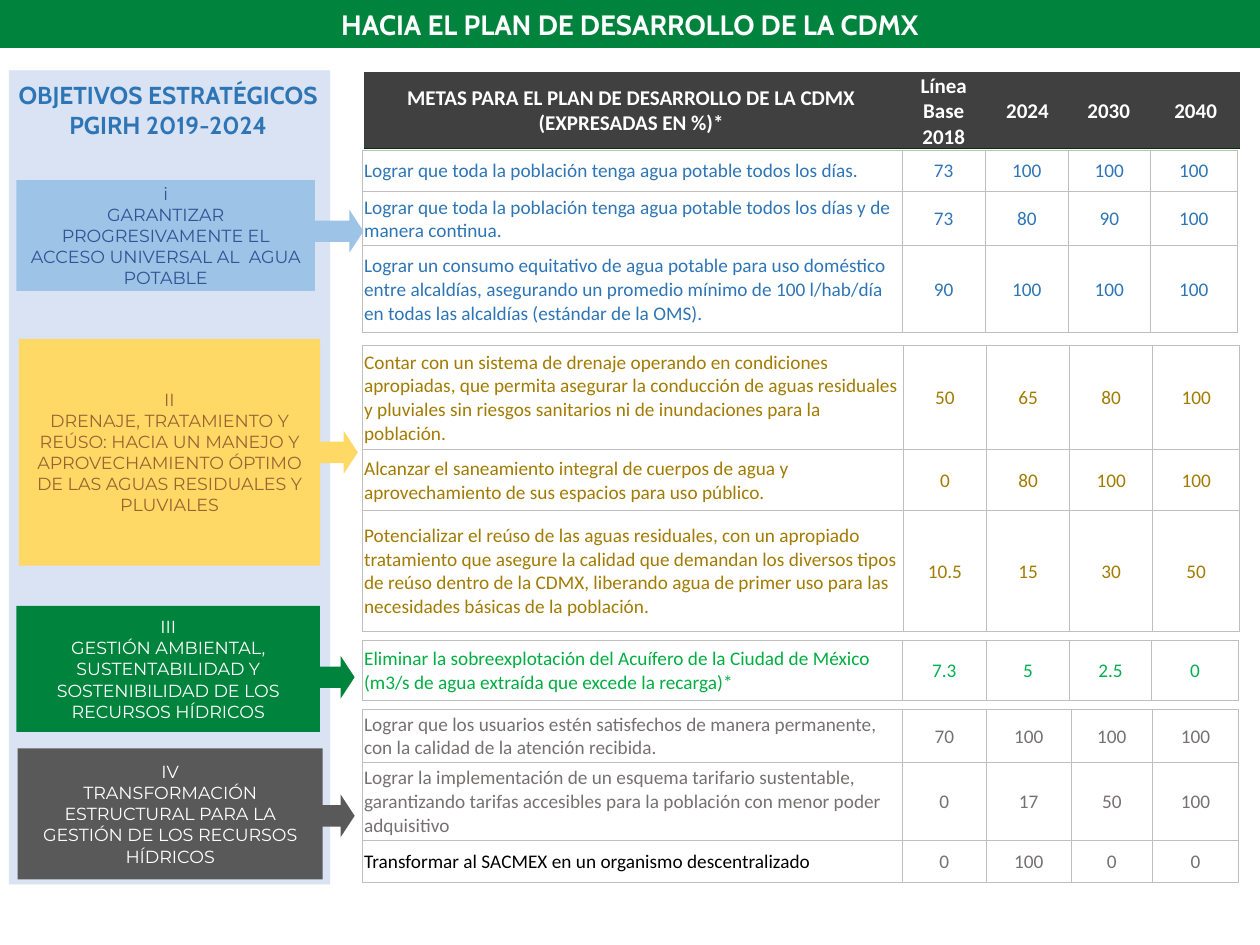
from lxml.etree import SubElement
from pptx import Presentation
from pptx.dml.color import RGBColor
from pptx.enum.shapes import MSO_SHAPE
from pptx.enum.text import MSO_ANCHOR, PP_ALIGN
from pptx.oxml.ns import qn
from pptx.util import Inches, Pt

COLORS = {
    "white": "FFFFFF", "black": "000000", "panel": "DAE3F3",
    "green": "00843D", "blue": "2E75B6", "header": "404040",
    "header_line": "003300", "grid": "BFBFBF", "sky": "9DC3E6",
    "navy": "2F5597", "yellow": "FFD966", "brown": "996633",
    "dark": "595959", "ochre": "A27B00", "goal_green": "00AE42",
    "value_green": "00B050", "gray": "767171",
}
TITLE = {"name": "Cabin", "size": Pt(16), "bold": True}
SUBTITLE = {"name": "Cabin", "size": Pt(14), "bold": True}
OBJECTIVE = {"name": "Montserrat", "size": Pt(10), "bold": False}
HEADER = {"name": "Calibri", "size": Pt(12), "bold": True}
BODY = {"name": "Calibri", "size": Pt(11), "bold": False}
MARGINS = ("margin_left", "margin_right", "margin_top", "margin_bottom")

ARROWS = [
    ((2.26, 6.09, 0.34, 0.77), "dark"),
    ((2.31, 5.04, 0.34, 0.67), "green"),
    ((2.3, 3.22, 0.34, 0.74), "yellow"),
    ((2.38, 1.5, 0.34, 0.67), "sky"),
]
OBJECTIVES = [
    ((0.13, 1.43, 2.37, 0.88), "sky", "navy",
     ["i", "GARANTIZAR PROGRESIVAMENTE EL ACCESO UNIVERSAL AL  AGUA POTABLE"]),
    ((0.15, 2.69, 2.39, 1.8), "yellow", "brown",
     ["II", "DRENAJE, TRATAMIENTO Y REÚSO: HACIA UN MANEJO Y APROVECHAMIENTO "
      "ÓPTIMO DE LAS AGUAS RESIDUALES Y PLUVIALES"]),
    ((0.13, 4.81, 2.41, 1), "green", "white",
     ["III", "GESTIÓN AMBIENTAL, SUSTENTABILIDAD Y SOSTENIBILIDAD DE LOS "
      "RECURSOS HÍDRICOS"]),
    ((0.14, 5.94, 2.42, 1.04), "dark", "white",
     ["IV", "TRANSFORMACIÓN ESTRUCTURAL PARA LA GESTIÓN DE LOS RECURSOS "
      "HÍDRICOS"]),
]
HEADER_ROW = ["METAS PARA EL PLAN DE DESARROLLO DE LA CDMX (EXPRESADAS EN %)*",
              "Línea Base 2018", "2024", "2030", "2040"]
GOAL_TABLES = [
    (1.19, [4.28, 0.66, 0.66, 0.65, 0.69], "blue", [
        (0.33, "blue", ["Lograr que toda la población tenga agua potable todos "
                        "los días.", "73", "100", "100", "100"]),
        (0.43, "blue", ["Lograr que toda la población tenga agua potable todos "
                        "los días y de manera continua.",
                        "73", "80", "90", "100"]),
        (0.69, "blue", ["Lograr un consumo equitativo de agua potable para uso "
                        "doméstico entre alcaldías, asegurando un promedio "
                        "mínimo de 100 l/hab/día en todas las alcaldías "
                        "(estándar de la OMS).", "90", "100", "100", "100"]),
    ]),
    (2.74, [4.29, 0.66, 0.66, 0.66, 0.69], "ochre", [
        (0.83, "ochre", ["Contar con un sistema de drenaje operando en "
                         "condiciones apropiadas, que permita asegurar la "
                         "conducción de aguas residuales y pluviales sin "
                         "riesgos sanitarios ni de inundaciones para la "
                         "población.", "50", "65", "80", "100"]),
        (0.48, "ochre", ["Alcanzar el saneamiento integral de cuerpos de agua "
                         "y aprovechamiento de sus espacios para uso público.",
                         "0", "80", "100", "100"]),
        (0.96, "ochre", ["Potencializar el reúso de las aguas residuales, con "
                         "un apropiado tratamiento que asegure la calidad que "
                         "demandan los diversos tipos de reúso dentro de la "
                         "CDMX, liberando agua de primer uso para las "
                         "necesidades básicas de la población.",
                         "10.5", "15", "30", "50"]),
    ]),
    (5.08, [4.28, 0.67, 0.66, 0.65, 0.69], "value_green", [
        (0.48, "goal_green", ["Eliminar la sobreexplotación del Acuífero de la "
                              "Ciudad de México (m3/s de agua extraída que "
                              "excede la recarga)*", "7.3", "5", "2.5", "0"]),
    ]),
    (5.63, [4.28, 0.67, 0.67, 0.65, 0.68], "gray", [
        (0.42, "gray", ["Lograr que los usuarios estén satisfechos de manera "
                        "permanente, con la calidad de la atención recibida.",
                        "70", "100", "100", "100"]),
        (0.62, "gray", ["Lograr la implementación de un esquema tarifario "
                        "sustentable, garantizando tarifas accesibles para la "
                        "población con menor poder adquisitivo",
                        "0", "17", "50", "100"]),
        (0.33, "black", ["Transformar al SACMEX en un organismo "
                         "descentralizado", "0", "100", "0", "0"]),
    ]),
]


def rgb(color):
    """Return the named color."""
    return RGBColor.from_string(COLORS[color])


def write_text(text_frame, lines, style, color, align=PP_ALIGN.CENTER):
    """Write one formatted paragraph per line."""
    for index, line in enumerate(lines):
        paragraph = (text_frame.add_paragraph() if index
                     else text_frame.paragraphs[0])
        paragraph.alignment = align
        run = paragraph.add_run()
        run.text = line
        for name, value in style.items():
            setattr(run.font, name, value)
        run.font.color.rgb = rgb(color)


def set_frame(text_frame, margin=None):
    """Wrap and centre the text vertically, with an optional even margin."""
    text_frame.word_wrap = True
    text_frame.vertical_anchor = MSO_ANCHOR.MIDDLE
    if margin is not None:
        for side in MARGINS:
            setattr(text_frame, side, Inches(margin))


def add_block(slide, box, fill, kind=MSO_SHAPE.RECTANGLE):
    """Add a flat filled shape."""
    shape = slide.shapes.add_shape(kind, *map(Inches, box))
    shape.shadow.inherit = False
    shape.fill.solid()
    shape.fill.fore_color.rgb = rgb(fill)
    shape.line.fill.background()
    return shape


def add_arrow(slide, box, fill):
    """Add an arrow that points right."""
    arrow = add_block(slide, box, fill, MSO_SHAPE.DOWN_ARROW)
    arrow.rotation = 270
    arrow.adjustments[0] = 0.5
    arrow.adjustments[1] = 0.328


def set_borders(cell, borders):
    """Draw the borders of a cell; a side without color has no line."""
    properties = cell._tc.get_or_add_tcPr()
    for side in ("L", "R", "T", "B"):
        line = SubElement(properties, qn(f"a:ln{side}"), w=str(Pt(0.5)))
        if side in borders:
            fill = SubElement(line, qn("a:solidFill"))
            SubElement(fill, qn("a:srgbClr"), val=COLORS[borders[side]])
        else:
            SubElement(line, qn("a:noFill"))


def fill_cell(cell, text, style, color, align, borders, fill=None):
    """Write and format one table cell."""
    for side, margin in zip(MARGINS, (0.01, 0.01, 0.01, 0)):
        setattr(cell, side, Inches(margin))
    cell.vertical_anchor = MSO_ANCHOR.MIDDLE
    write_text(cell.text_frame, [text], style, color, align)
    set_borders(cell, borders)
    if fill:
        cell.fill.solid()
        cell.fill.fore_color.rgb = rgb(fill)
    else:
        cell.fill.background()


def add_grid(slide, left, top, widths, heights):
    """Add an unbanded table with the given columns and rows."""
    table = slide.shapes.add_table(
        len(heights), len(widths), Inches(left), Inches(top),
        Inches(sum(widths)), Inches(sum(heights))).table
    table.first_row = table.horz_banding = False
    for column, width in zip(table.columns, widths):
        column.width = Inches(width)
    for row, height in zip(table.rows, heights):
        row.height = Inches(height)
    return table


def add_goal_table(slide, top, widths, value_color, rows):
    """Add the goals of one objective with their yearly values."""
    table = add_grid(slide, 2.88, top, widths, [row[0] for row in rows])
    borders = dict.fromkeys("LRTB", "grid")
    for table_row, (_, goal_color, texts) in zip(table.rows, rows):
        for index, (cell, text) in enumerate(zip(table_row.cells, texts)):
            color = value_color if index else goal_color
            align = PP_ALIGN.CENTER if index else PP_ALIGN.LEFT
            fill_cell(cell, text, BODY, color, align, borders)


def main():
    """Build the slide and save it."""
    presentation = Presentation()
    presentation.slide_width, presentation.slide_height = Inches(10), Inches(7.5)
    slide = presentation.slides.add_slide(presentation.slide_layouts[6])
    add_block(slide, (0.07, 0.56, 2.55, 6.46), "panel")
    for box, fill in ARROWS:
        add_arrow(slide, box, fill)
    banner = add_block(slide, (0, 0, 10, 0.38), "green")
    set_frame(banner.text_frame, 0)
    write_text(banner.text_frame, ["HACIA EL PLAN DE DESARROLLO DE LA CDMX"],
               TITLE, "white")
    heading = slide.shapes.add_textbox(*map(Inches, (0.11, 0.56, 2.45, 0.62)))
    set_frame(heading.text_frame, 0)
    write_text(heading.text_frame, ["OBJETIVOS ESTRATÉGICOS PGIRH 2019-2024"],
               SUBTITLE, "blue")
    for box, fill, color, lines in OBJECTIVES:
        block = add_block(slide, box, fill)
        set_frame(block.text_frame)
        write_text(block.text_frame, lines, OBJECTIVE, color)
    header = add_grid(slide, 2.89, 0.57, [4.24, 0.72, 0.61, 0.68, 0.7], [0.56])
    for cell, text in zip(header.rows[0].cells, HEADER_ROW):
        fill_cell(cell, text, HEADER, "white", PP_ALIGN.CENTER,
                  {"B": "header_line"}, "header")
    for goal_table in GOAL_TABLES:
        add_goal_table(slide, *goal_table)
    presentation.save("out.pptx")


if __name__ == "__main__":
    main()
